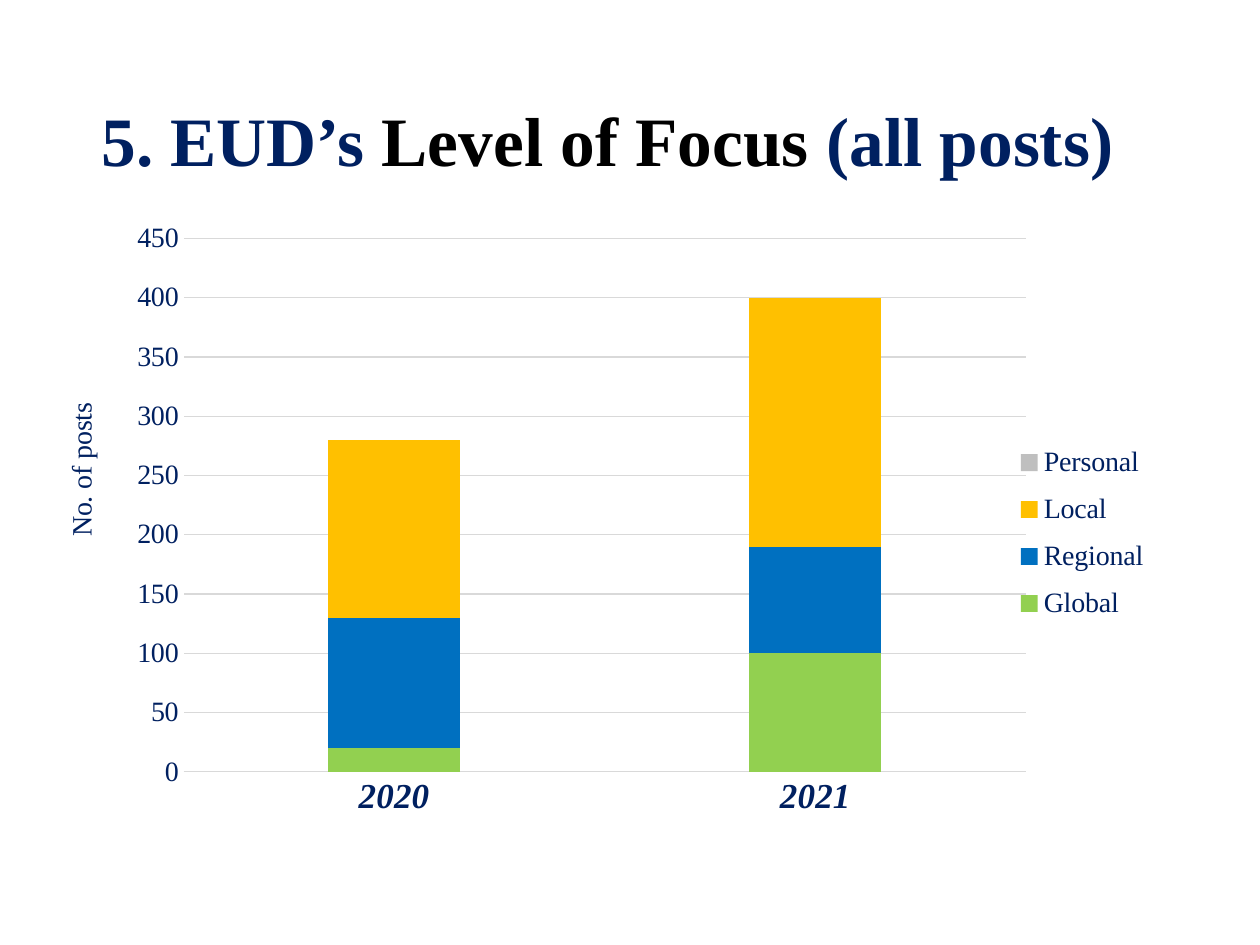
from lxml.etree import SubElement
from pptx import Presentation
from pptx.chart.data import CategoryChartData
from pptx.dml.color import RGBColor
from pptx.enum.chart import XL_CHART_TYPE as ChartType, XL_LEGEND_POSITION as LegendSide, XL_TICK_MARK as Tick
from pptx.enum.text import MSO_ANCHOR as Anchor, PP_ALIGN as Align
from pptx.oxml.ns import qn
from pptx.util import Inches, Pt

WIDTH, HEIGHT = Inches(10), Inches(7.5)
FONT = "Times New Roman"
COLORS = {
    "navy": "002060", "black": "000000", "rule": "D9D9D9",
    "Global": "92D050", "Regional": "0070C0", "Local": "FFC000", "Personal": "BFBFBF",
}
YEARS = ("2020", "2021")
POSTS = {"Global": (20, 100), "Regional": (110, 90), "Local": (150, 210), "Personal": (0, 0)}
HEADING = (("5. EUD’s ", "navy"), ("Level of Focus", "black"), (" (all posts)", "navy"))


def rgb(name):
    """Look up a named colour."""
    return RGBColor.from_string(COLORS[name])


def share(left, top, width, height):
    """Turn percentages of the slide's size into a box."""
    return (int(WIDTH * left / 100), int(HEIGHT * top / 100),
            int(WIDTH * width / 100), int(HEIGHT * height / 100))


def apply(target, **values):
    """Set several attributes on one object."""
    for name, value in values.items():
        setattr(target, name, value)


def style_font(font, size, color="navy", **values):
    """Give a font the slide's face, a size and a colour."""
    apply(font, name=FONT, size=Pt(size), **values)
    font.color.rgb = rgb(color)


def style_line(line):
    """Draw a line as a thin pale rule."""
    line.color.rgb = rgb("rule")
    line.width = Pt(0.75)


def place(element, position, **settings):
    """Fix a chart part at shares of the chart's size."""
    for old in element.findall(qn("c:layout")):
        element.remove(old)
    layout = SubElement(element, qn("c:layout"))
    element.insert(position, layout)
    manual = SubElement(layout, qn("c:manualLayout"))
    for tag, value in settings.items():
        SubElement(manual, qn(f"c:{tag}")).set("val", str(value))


def add_heading(slide, box):
    """Add the centred heading in its box."""
    frame = slide.shapes.add_textbox(*box).text_frame
    apply(frame, word_wrap=True, vertical_anchor=Anchor.MIDDLE)
    paragraph = frame.paragraphs[0]
    apply(paragraph, alignment=Align.CENTER, line_spacing=0.9)
    for words, color in HEADING:
        run = paragraph.add_run()
        run.text = words
        style_font(run.font, 39.6, color, bold=True)


def style_axes(chart):
    """Format the year axis and the posts axis."""
    years, posts = chart.category_axis, chart.value_axis
    for axis in (years, posts):
        apply(axis, major_tick_mark=Tick.NONE, minor_tick_mark=Tick.NONE)
    style_font(years.tick_labels.font, 20, bold=True, italic=True)
    style_line(years.format.line)
    apply(posts, minimum_scale=0, maximum_scale=450, major_unit=50, has_major_gridlines=True)
    style_font(posts.tick_labels.font, 16, bold=False)
    style_line(posts.major_gridlines.format.line)
    posts.format.line.fill.background()
    caption = posts.axis_title.text_frame.paragraphs[0].add_run()
    caption.text = "No. of posts"
    style_font(caption.font, 16, bold=False)


def place_parts(chart):
    """Set the plot, the axis title and the legend within the chart."""
    plot_area = chart.element.find(f".//{qn('c:plotArea')}")
    caption = plot_area.find(f".//{qn('c:title')}")
    legend = chart.element.find(f".//{qn('c:legend')}")
    edges = {"xMode": "edge", "yMode": "edge"}
    place(plot_area, 0, layoutTarget="inner", **edges, x=0.119, y=0.083, w=0.719, h=0.76)
    place(caption, 1, **edges, x=0.012, y=0.31)
    place(legend, 1, **edges, x=0.826, y=0.358, w=0.12, h=0.29)


def add_posts_chart(slide, box):
    """Add the stacked columns of posts by level of focus."""
    data = CategoryChartData()
    data.categories = YEARS
    for level, counts in POSTS.items():
        data.add_series(level, counts)
    chart = slide.shapes.add_chart(ChartType.COLUMN_STACKED, *box, data).chart
    apply(chart, has_title=False, has_legend=True)
    style_font(chart.font, 16)
    apply(chart.plots[0], gap_width=219, overlap=100, vary_by_categories=False)
    for series in chart.plots[0].series:
        series.format.fill.solid()
        series.format.fill.fore_color.rgb = rgb(series.name)
    style_axes(chart)
    apply(chart.legend, position=LegendSide.RIGHT, include_in_layout=False)
    style_font(chart.legend.font, 16)
    place_parts(chart)


def main():
    """Build and save the slide."""
    deck = Presentation()
    apply(deck, slide_width=WIDTH, slide_height=HEIGHT)
    slide = deck.slides.add_slide(deck.slide_layouts[6])
    add_posts_chart(slide, share(3.5, 19.07, 93, 74.27))
    add_heading(slide, share(5.1, 9.33, 86.2, 11.87))
    deck.save("out.pptx")


if __name__ == "__main__":
    main()
